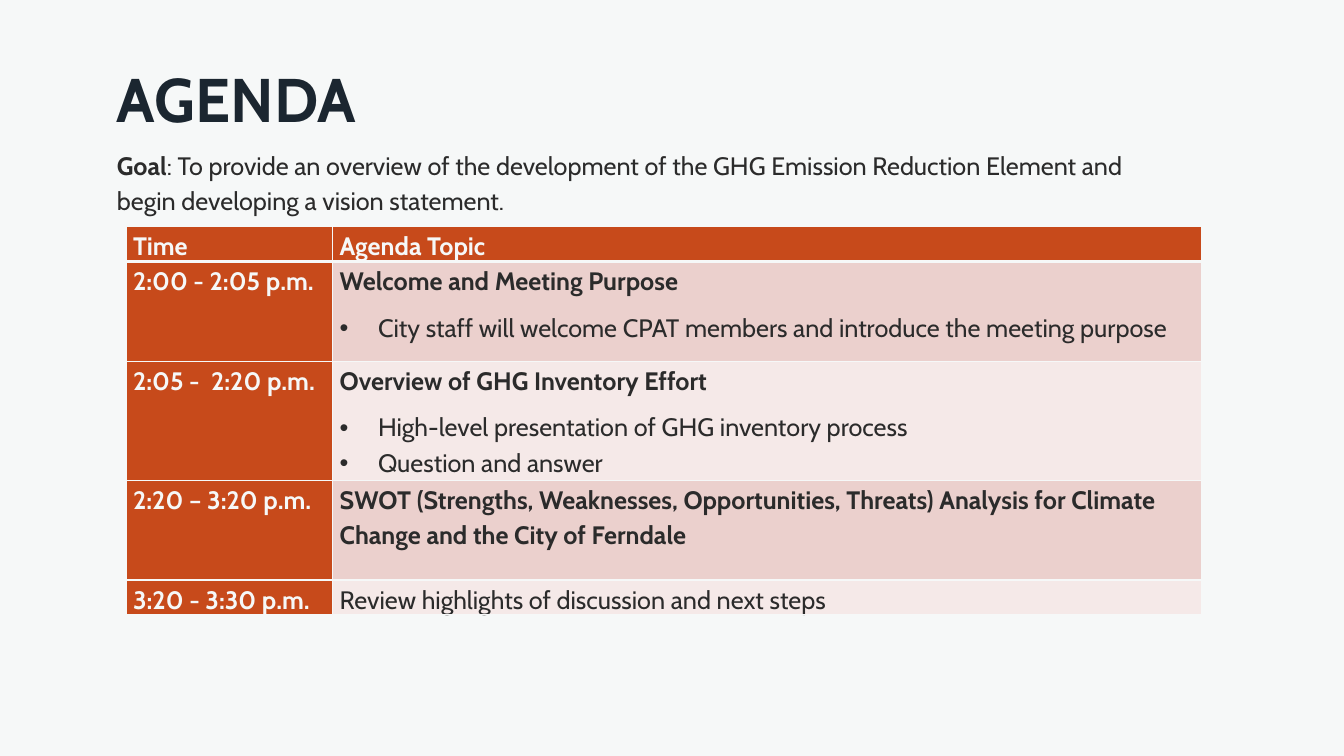
from lxml import etree
from pptx import Presentation
from pptx.dml.color import RGBColor
from pptx.enum import text
from pptx.oxml import ns
from pptx.util import Inches, Pt

PAPER = RGBColor(0xF6, 0xF8, 0xF8)
NAVY = RGBColor(0x1B, 0x26, 0x30)
INK = RGBColor(0x2B, 0x2B, 0x2B)
RUST = RGBColor(0xC7, 0x4A, 0x1B)
ROSE = RGBColor(0xEB, 0xD0, 0xCD)
BLUSH = RGBColor(0xF5, 0xE9, 0xE8)
FONT = "Cabin"

GOAL = (": To provide an overview of the development of the GHG Emission "
        "Reduction Element and begin developing a vision statement.")
HEADER = ("Time", "Agenda Topic")
AGENDA = [
    ("2:00 - 2:05 p.m.", "Welcome and Meeting Purpose", True, 8,
     ["City staff will welcome CPAT members and introduce the meeting purpose"]),
    ("2:05 -  2:20 p.m.", "Overview of GHG Inventory Effort", True, 0,
     ["High-level presentation of GHG inventory process", "Question and answer"]),
    ("2:20 – 3:20 p.m.",
     "SWOT (Strengths, Weaknesses, Opportunities, Threats) Analysis for "
     "Climate Change and the City of Ferndale", True, 8, []),
    ("3:20 - 3:30 p.m.", "Review highlights of discussion and next steps",
     False, 8, []),
]
COL_WIDTHS = (2.05, 8.62)
ROW_HEIGHTS = (0.33, 0.99, 1.18, 0.99, 0.33)


def style_run(r, color, bold, size=18):
    """Apply the deck font to a run."""
    r.font.name = FONT
    r.font.size = Pt(size)
    r.font.bold = bold
    r.font.color.rgb = color


def space(p, after=8):
    """Set the line and paragraph spacing of body text."""
    p.line_spacing = 1.15
    p.space_after = Pt(after)


def set_insets(frame, left, top, right, bottom):
    """Set the four inner margins of a text frame or cell, in inches."""
    frame.margin_left = Inches(left)
    frame.margin_top = Inches(top)
    frame.margin_right = Inches(right)
    frame.margin_bottom = Inches(bottom)


def add_bullet(p):
    """Give a paragraph a hanging round bullet."""
    pPr = p._p.get_or_add_pPr()
    pPr.set("marL", str(Inches(0.38)))
    pPr.set("indent", str(-Inches(0.38)))
    etree.SubElement(pPr, ns.qn("a:buFont")).set("typeface", "Arial")
    etree.SubElement(pPr, ns.qn("a:buChar")).set("char", "•")


def add_borders(cell, bottom):
    """Draw pale borders round a cell, with the given bottom width in points."""
    tcPr = cell._tc.get_or_add_tcPr()
    for side, width in (("L", 1), ("R", 1), ("T", 1), ("B", bottom)):
        ln = etree.SubElement(tcPr, ns.qn(f"a:ln{side}"), w=str(Pt(width)))
        fill = etree.SubElement(ln, ns.qn("a:solidFill"))
        etree.SubElement(fill, ns.qn("a:srgbClr"), val=str(PAPER))


def fill_cell(cell, heading, color, fill, bold=True, border=1):
    """Write the first line of a cell and set its look."""
    set_insets(cell, 0.07, 0, 0.07, 0)
    add_borders(cell, border)
    cell.fill.solid()
    cell.fill.fore_color.rgb = fill
    p = cell.text_frame.paragraphs[0]
    p.text = heading
    space(p)
    style_run(p.runs[0], color, bold)


def add_title(slide, left, top, width, height):
    """Place the slide title."""
    sp = slide.shapes.title
    sp.left, sp.top, sp.width, sp.height = map(Inches, (left, top, width, height))
    tf = sp.text_frame
    tf.text = "AGENDA"
    tf.auto_size = text.MSO_AUTO_SIZE.NONE
    tf.vertical_anchor = text.MSO_ANCHOR.TOP
    set_insets(tf, 0, 0.21, 0, 0)
    p = tf.paragraphs[0]
    p.alignment = text.PP_ALIGN.LEFT
    p.line_spacing = 0.8
    style_run(p.runs[0], NAVY, True, 44)


def add_goal(slide, left, top, width, height):
    """Place the goal statement."""
    sp = slide.shapes.add_textbox(*map(Inches, (left, top, width, height)))
    tf = sp.text_frame
    tf.word_wrap = True
    set_insets(tf, 0, 0.05, 0, 0.05)
    p = tf.paragraphs[0]
    space(p)
    for words, bold in (("Goal", True), (GOAL, False)):
        r = p.add_run()
        r.text = words
        style_run(r, INK, bold)


def add_agenda(slide, left, top):
    """Place the agenda table."""
    frame = slide.shapes.add_table(
        len(ROW_HEIGHTS), len(COL_WIDTHS), Inches(left), Inches(top),
        Inches(sum(COL_WIDTHS)), Inches(sum(ROW_HEIGHTS)))
    table = frame.table
    for col, width in zip(table.columns, COL_WIDTHS):
        col.width = Inches(width)
    for row, height in zip(table.rows, ROW_HEIGHTS):
        row.height = Inches(height)
    for i, label in enumerate(HEADER):
        fill_cell(table.cell(0, i), label, PAPER, RUST, border=3)
    for i, (time, topic, bold, after, points) in enumerate(AGENDA, 1):
        fill_cell(table.cell(i, 0), time, PAPER, RUST)
        cell = table.cell(i, 1)
        fill_cell(cell, topic, INK, ROSE if i % 2 else BLUSH, bold)
        for point in points:
            p = cell.text_frame.add_paragraph()
            p.text = point
            add_bullet(p)
            space(p, after)
            style_run(p.runs[0], INK, False)


def main():
    """Build and save the agenda slide."""
    prs = Presentation()
    prs.slide_width, prs.slide_height = Inches(13.33), Inches(7.5)
    slide = prs.slides.add_slide(prs.slide_layouts[5])
    slide.background.fill.solid()
    slide.background.fill.fore_color.rgb = PAPER
    add_title(slide, 1.16, 0.54, 4.62, 1.58)
    add_goal(slide, 1.16, 1.4, 10.56, 1.17)
    add_agenda(slide, 1.25, 2.25)
    prs.save("out.pptx")


if __name__ == "__main__":
    main()
